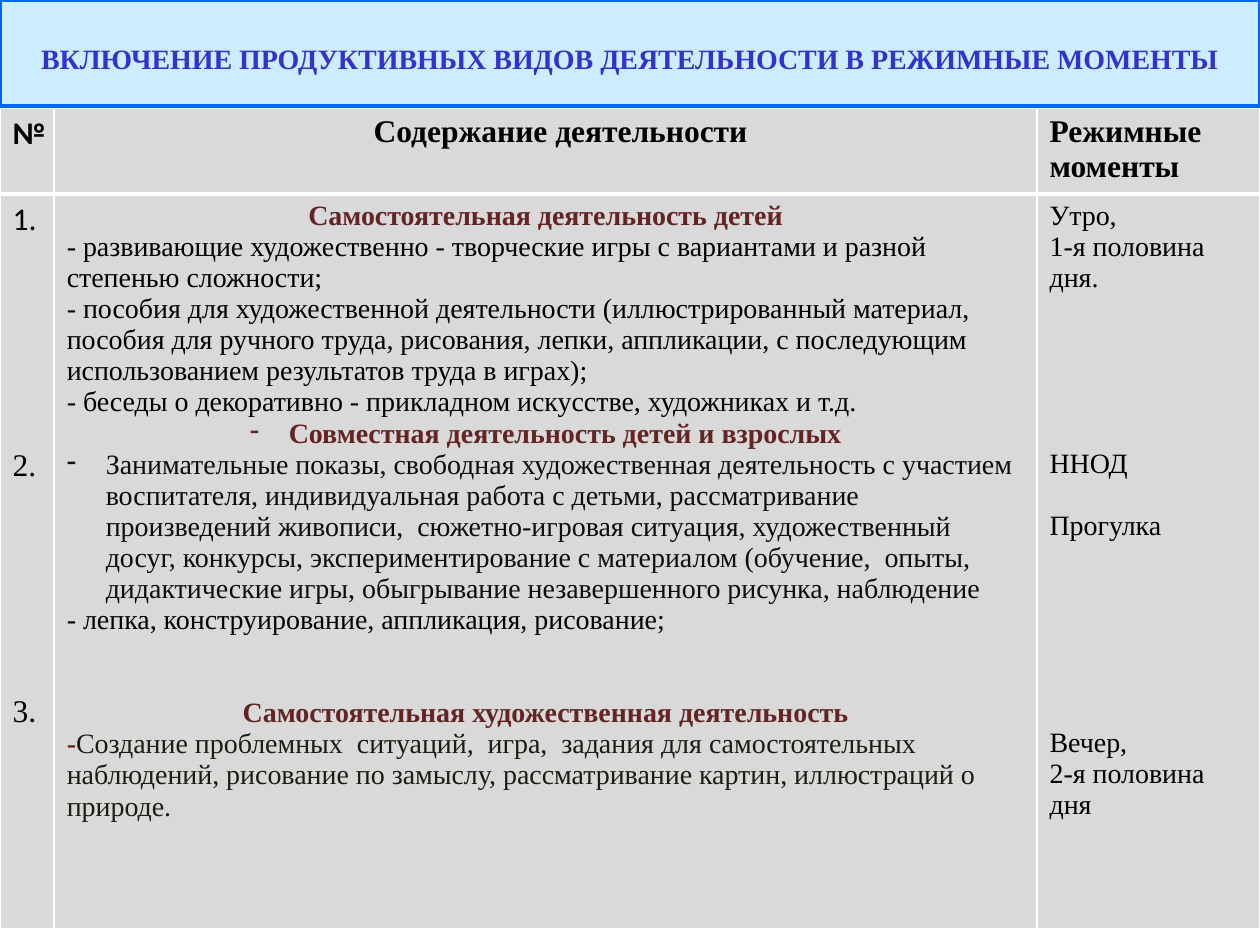
import pptx
import pptx.util
import pptx.dml.color
import pptx.enum.text
import pptx.oxml
import pptx.oxml.ns
from lxml import etree

Inches, Pt = pptx.util.Inches, pptx.util.Pt
CENTER = pptx.enum.text.PP_ALIGN.CENTER
SERIF, SANS = "Times New Roman", "Calibri"
MAROON, GREY, WHITE = "632523", "D9D9D9", "FFFFFF"
HEADING = {"bold": True, "color": MAROON, "align": CENTER}
HEADER = {"bold": True, "size": 18}
LINE = 17.7
NUMBER_GAP = 119.6

TITLE = "ВКЛЮЧЕНИЕ ПРОДУКТИВНЫХ ВИДОВ ДЕЯТЕЛЬНОСТИ В РЕЖИМНЫЕ МОМЕНТЫ"
COLUMNS = [0.43, 7.8, 1.77]
ROWS = [0.68, 5.83]

NUMBERS = [
    ("1.", {"size": 18, "font": SANS}),
    ("2.", {"size": 18, "before": NUMBER_GAP}),
    ([("3", {}), (".", {"font": SANS})], {"size": 18, "before": NUMBER_GAP}),
]
ACTIVITIES = [
    ("Самостоятельная деятельность детей", HEADING),
    ("- развивающие художественно - творческие игры с вариантами и разной степенью сложности;", {}),
    ("- пособия для художественной деятельности (иллюстрированный материал, пособия для ручного "
     "труда, рисования, лепки, аппликации, с последующим использованием результатов труда в играх);", {}),
    ("- беседы о декоративно - прикладном искусстве, художниках и т.д.", {}),
    ("Совместная деятельность детей и взрослых", {**HEADING, "bullet": "-"}),
    ("Занимательные показы, свободная художественная деятельность с участием воспитателя, "
     "индивидуальная работа с детьми, рассматривание произведений живописи,  сюжетно-игровая "
     "ситуация, художественный досуг, конкурсы, экспериментирование с материалом (обучение,  опыты, "
     "дидактические игры, обыгрывание незавершенного рисунка, наблюдение",
     {"color": "0D0D0D", "bullet": "-"}),
    ("- лепка, конструирование, аппликация, рисование;", {}),
    ("Самостоятельная художественная деятельность", {**HEADING, "before": 2 * LINE}),
    ([("-", {"bold": True, "color": MAROON}),
      ("Создание проблемных  ситуаций,  игра,  задания для самостоятельных наблюдений, рисование "
       "по замыслу, рассматривание картин, иллюстраций о природе.", {"color": "1E1C11"})], {}),
]
MOMENTS = [
    ("Утро,", {}),
    ("1-я половина дня.", {}),
    ("ННОД", {"before": 5 * LINE}),
    ("Прогулка", {"before": LINE}),
    ("Вечер,", {"before": 6 * LINE}),
    ("2-я половина дня", {}),
]
CELLS = [
    [[("№", {**HEADER, "font": SANS})],
     [("Содержание деятельности", {**HEADER, "align": CENTER})],
     [("Режимные моменты", HEADER)]],
    [NUMBERS, ACTIVITIES, MOMENTS],
]


def rgb(value):
    return pptx.dml.color.RGBColor.from_string(value)


def add_span(para, text, size=16, font=SERIF, color="000000", bold=False):
    span = para.add_run()
    span.text = text
    span.font.size = Pt(size)
    span.font.name = font
    span.font.bold = bold
    span.font.color.rgb = rgb(color)


def write(para, text, align=None, before=0, bullet=None, **style):
    para.alignment = align
    para.space_before = Pt(before)
    if bullet:
        properties = para._p.get_or_add_pPr()
        properties.set("marL", str(Inches(0.31)))
        properties.set("indent", str(Inches(-0.31)))
        etree.SubElement(properties, pptx.oxml.ns.qn("a:buFontTx"))
        etree.SubElement(properties, pptx.oxml.ns.qn("a:buChar")).set("char", bullet)
    spans = [(text, {})] if isinstance(text, str) else text
    for words, extra in spans:
        add_span(para, words, **{**style, **extra})


def fill_cell(cell, content, bottom_width):
    for index, (text, style) in enumerate(content):
        para = cell.text_frame.add_paragraph() if index else cell.text_frame.paragraphs[0]
        write(para, text, **style)
    properties = cell._tc.get_or_add_tcPr()
    for side, width in (("L", 1), ("R", 1), ("T", 1), ("B", bottom_width)):
        properties.append(pptx.oxml.parse_xml(
            f'<a:ln{side} {pptx.oxml.ns.nsdecls("a")} w="{Pt(width)}"><a:solidFill>'
            f'<a:srgbClr val="{WHITE}"/></a:solidFill></a:ln{side}>'))
    cell.fill.solid()
    cell.fill.fore_color.rgb = rgb(GREY)


def add_title(page):
    box = page.shapes.title
    box.left, box.top, box.width, box.height = (Inches(v) for v in (0, 0, 10, 0.84))
    box.fill.solid()
    box.fill.fore_color.rgb = rgb("CCECFF")
    box.line.color.rgb = rgb("0066FF")
    box.line.width = Pt(2.25)
    frame = box.text_frame
    frame.word_wrap = True
    frame.auto_size = pptx.enum.text.MSO_AUTO_SIZE.NONE
    frame.vertical_anchor = pptx.enum.text.MSO_ANCHOR.MIDDLE
    frame.margin_top, frame.margin_bottom = Inches(0.13), Inches(0.05)
    write(frame.paragraphs[0], TITLE, align=CENTER, color="3333CC", bold=True)


def add_schedule(page):
    table = page.shapes.add_table(
        len(ROWS), len(COLUMNS), Inches(0), Inches(0.86),
        Inches(sum(COLUMNS)), Inches(sum(ROWS))).table
    for column, width in zip(table.columns, COLUMNS):
        column.width = Inches(width)
    for row, height, contents, bottom_width in zip(table.rows, ROWS, CELLS, (3, 1)):
        row.height = Inches(height)
        for cell, content in zip(row.cells, contents):
            fill_cell(cell, content, bottom_width)
    table.cell(0, 1).margin_left = Inches(0.34)


def main():
    deck = pptx.Presentation()
    deck.slide_width, deck.slide_height = Inches(10), Inches(7.5)
    page = deck.slides.add_slide(deck.slide_layouts[5])
    add_title(page)
    add_schedule(page)
    deck.save("out.pptx")


if __name__ == "__main__":
    main()
